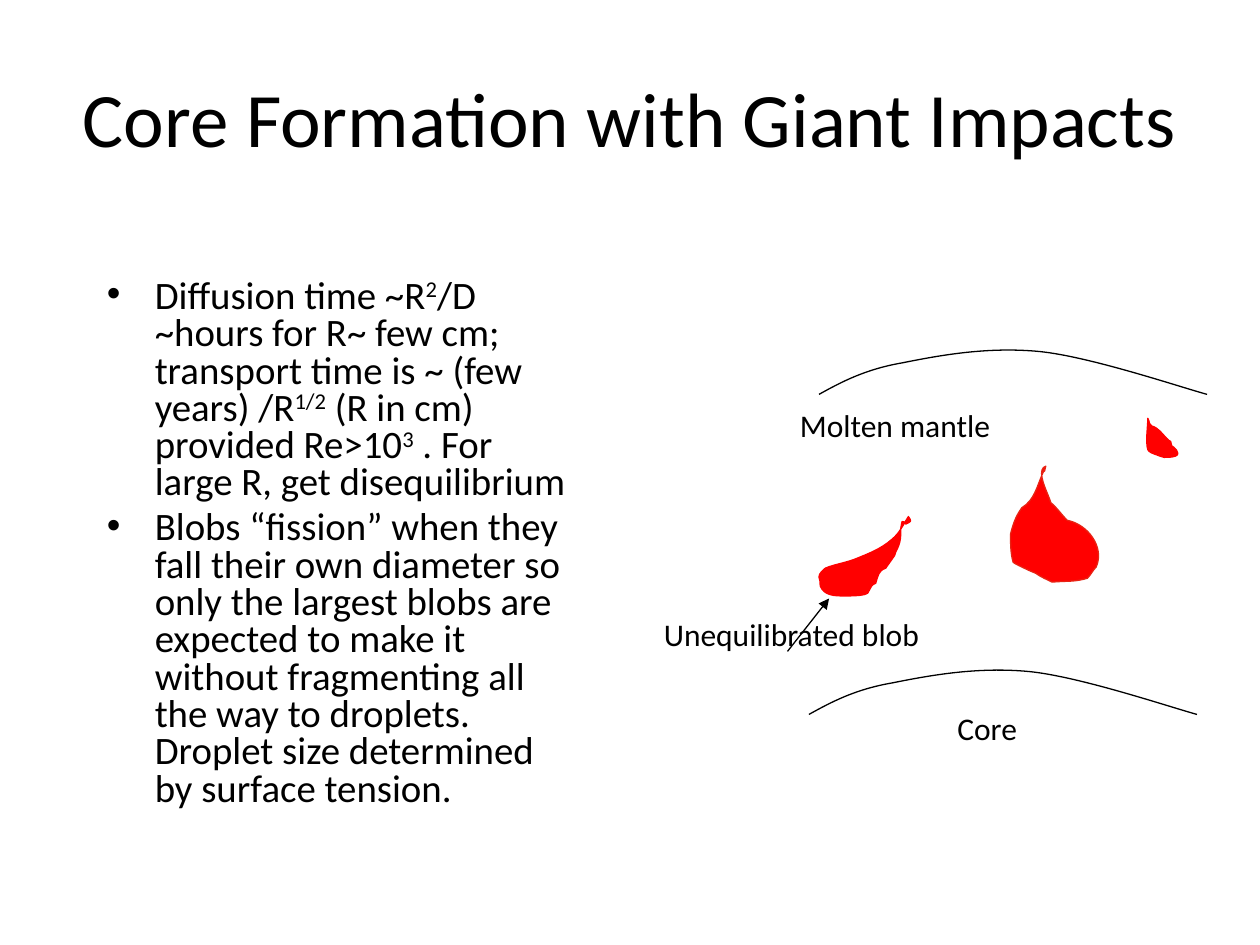
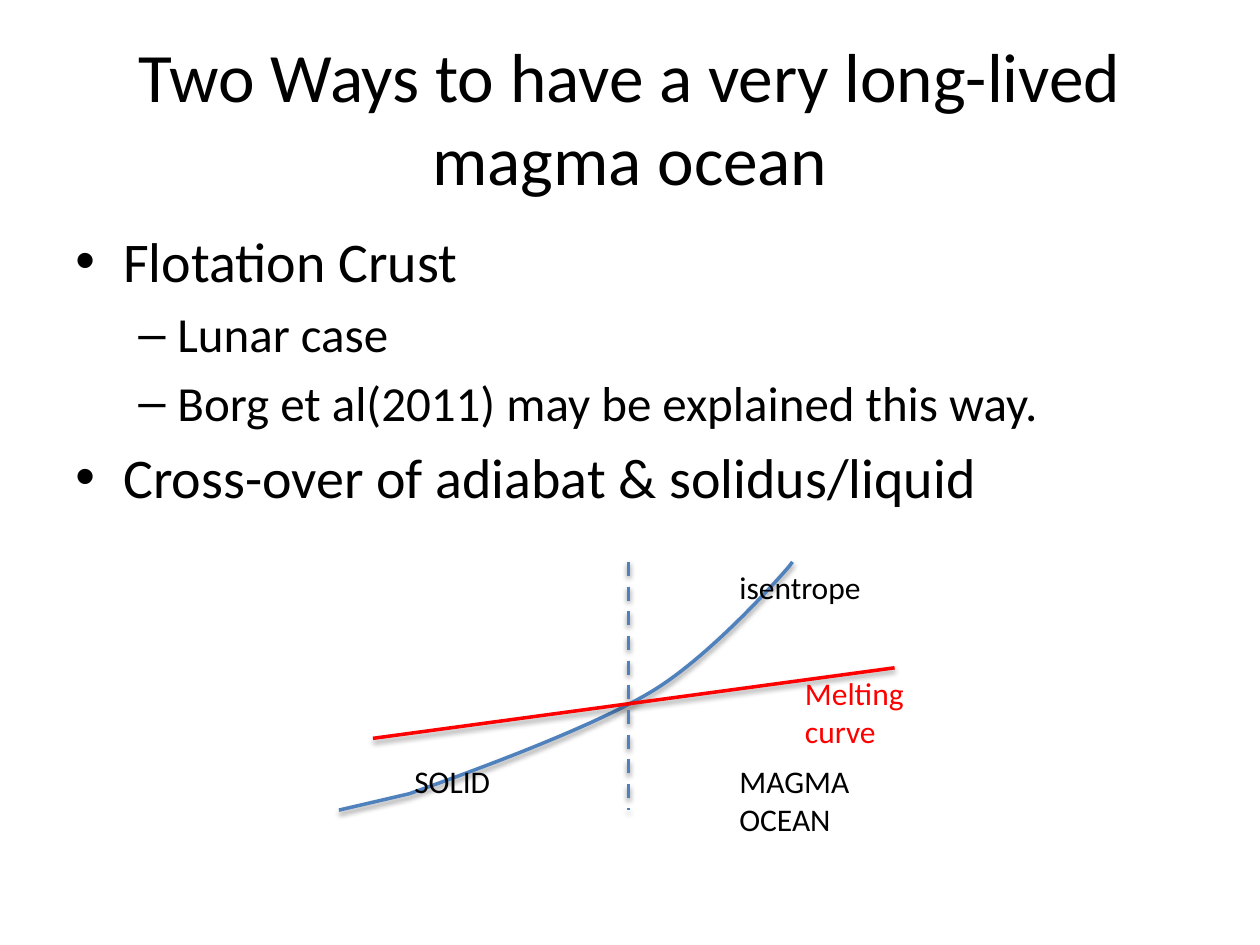
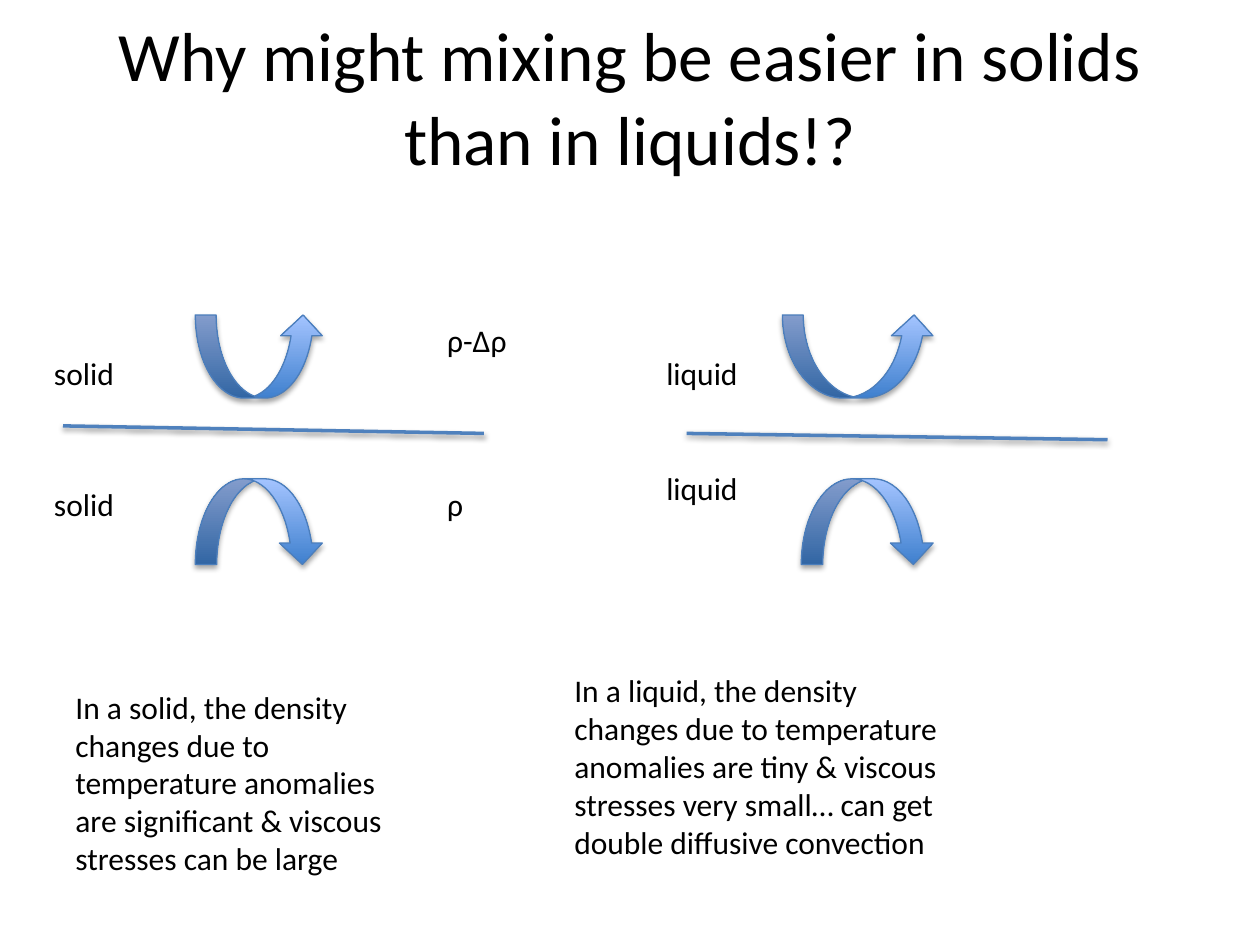
from collections import namedtuple
from dataclasses import dataclass

from lxml.etree import SubElement
from pptx import Presentation
from pptx.dml.color import RGBColor
from pptx.enum.dml import MSO_LINE
from pptx.enum.shapes import MSO_CONNECTOR, MSO_SHAPE
from pptx.enum.text import MSO_ANCHOR as Anchor, PP_ALIGN as Align
from pptx.oxml.ns import qn
from pptx.util import Emu, Pt

EMU_PER_PX = 9144
Box = namedtuple("Box", "left top width height")
Level = namedtuple("Level", "mark margin hang")
LEVELS = (Level("•", 38, 38), Level("–", 81, 31))


@dataclass(frozen=True)
class Theme:
    """Colours, font and type sizes shared by all slides."""
    font: str = "Calibri"
    ink: str = "000000"
    red: str = "FF0000"
    blob_edge: str = "E82314"
    blue: str = "4F81BD"
    arrow_edge: str = "4B7EBC"
    arrow_dark: str = "3F80CE"
    arrow_light: str = "A4C4FF"
    big_title: float = 44
    title: float = 39.6
    body: float = 32
    sub: float = 28
    small_body: float = 22.2
    label: float = 18
    thin: float = 0.75
    thick: float = 2


THEME = Theme()

ARC = [(0, 38), (18, 28, 37, 18, 66, 13), (96, 7, 134, 0, 175, 4),
       (215, 8, 286, 32, 308, 38)]
LARGE_BLOB = [
    (28, 5), (25, 16, 30, 0, 25, 12), (21, 21, 19, 32, 9, 38),
    (4, 45, 2, 51, 0, 59), (0, 66, 0, 74, 2, 81), (2, 82, 11, 86, 13, 87),
    (15, 88, 20, 90, 20, 90), (24, 93, 29, 95, 33, 97),
    (45, 96, 51, 97, 61, 94), (64, 91, 65, 88, 68, 85),
    (75, 69, 61, 51, 45, 48), (40, 43, 37, 38, 32, 34),
    (30, 27, 23, 15, 25, 8), (25, 6, 27, 6, 28, 5)]
LONG_BLOB = [
    (71, 0), (66, 8, 64, 13, 58, 18), (49, 26, 38, 30, 28, 34),
    (20, 37, 12, 38, 5, 41), (3, 43, 0, 45, 0, 48), (1, 50, 1, 53, 1, 55),
    (4, 63, 13, 63, 20, 63), (26, 63, 31, 63, 36, 62),
    (41, 62, 39, 55, 45, 53), (47, 47, 47, 43, 53, 41),
    (55, 38, 58, 34, 60, 31), (61, 27, 63, 25, 64, 21),
    (65, 17, 65, 13, 65, 9), (66, 7, 65, 5, 66, 4),
    (67, 3, 68, 5, 69, 6), (73, 4, 74, 4, 71, 0)]
SMALL_BLOB = [
    (2, 0), (2, 6, 0, 19, 2, 25), (3, 27, 6, 28, 9, 29),
    (11, 30, 15, 31, 15, 31), (18, 31, 21, 31, 24, 30),
    (29, 28, 22, 22, 21, 22), (19, 15, 22, 21, 17, 16),
    (13, 12, 11, 8, 5, 6), (2, 3, 4, 4, 2, 0)]
ISENTROPE = [
    (0, 197), (56, 184), (98, 169, 198, 133, 248, 103),
    (298, 73, 357, 4, 357, 4), (357, 4), (360, 0)]


def px(length):
    """Turn px into EMU."""
    return Emu(round(length * EMU_PER_PX))


def color(code):
    """Turn a hex code into a colour."""
    return RGBColor.from_string(code)


def inside(box, left, top, width=0, height=0):
    """Return a box placed relative to an outer box."""
    return Box(box.left + left, box.top + top, width, height)


def style_font(font, size, ink=THEME.ink):
    """Apply the theme font with a size and colour."""
    font.name, font.size = THEME.font, Pt(size)
    font.color.rgb = color(ink)


def style_line(shape, ink, width):
    """Set the line colour and width."""
    shape.line.color.rgb = color(ink)
    shape.line.width = Pt(width)


def set_shadow(shape, opacity=0, distance=1.6):
    """Replace the shadow with a soft one below, or with none."""
    effects = SubElement(shape._element.spPr, qn("a:effectLst"))
    if opacity:
        outer = SubElement(effects, qn("a:outerShdw"), blurRad=str(Pt(3.1)),
                           dist=str(Pt(distance)), dir="5400000", rotWithShape="0")
        shade = SubElement(outer, qn("a:srgbClr"), val=THEME.ink)
        SubElement(shade, qn("a:alpha"), val=str(opacity * 1000))


def add_text(page, box, text="", size=THEME.label, ink=THEME.ink):
    """Add a wrapping text box and return its frame."""
    frame = page.shapes.add_textbox(*map(px, box)).text_frame
    frame.word_wrap = True
    para = frame.paragraphs[0]
    if text:
        para.text = text
        style_font(para.font, size, ink)
    return frame


def add_title(page, box, text, size=THEME.title, lift=0):
    """Add a centred title, raised by a bottom inset if asked."""
    frame = add_text(page, box, text, size)
    frame.vertical_anchor = Anchor.MIDDLE
    frame.margin_bottom = px(5 + 2 * lift)
    frame.paragraphs[0].alignment = Align.CENTER


def add_bullets(page, box, items, spacing=1.0):
    """Add bullets from (level, size, text); carets enclose superscripts."""
    frame = add_text(page, box)
    for index, (depth, size, text) in enumerate(items):
        para = frame.add_paragraph() if index else frame.paragraphs[0]
        level = LEVELS[depth]
        para.level = depth
        para.line_spacing = spacing
        if index:
            para.space_before = Pt(round(size * 0.2, 1))
        props = para._p.get_or_add_pPr()
        props.set("marL", str(px(level.margin)))
        props.set("indent", str(px(-level.hang)))
        SubElement(props, qn("a:buFont"), typeface="Arial")
        SubElement(props, qn("a:buChar"), char=level.mark)
        style_font(para.font, size)
        for part, words in enumerate(text.split("^")):
            span = para.add_run()
            span.text = words
            if part % 2:
                span.font._element.set("baseline", "30000")


def add_line(page, box, start, end, ink, width, shadow=0):
    """Draw a straight line between two points of a box."""
    begin, finish = inside(box, *start), inside(box, *end)
    line = page.shapes.add_connector(MSO_CONNECTOR.STRAIGHT, px(begin.left), px(begin.top),
                                     px(finish.left), px(finish.top))
    style_line(line, ink, width)
    set_shadow(line, shadow)
    return line


def bend(curve, steps):
    """Turn each run of three segments that stands for a curve into one."""
    segments = iter(list(curve._element.iter(qn("a:lnTo"))))
    for step in steps:
        first = next(segments)
        if len(step) == 6:
            first.tag = qn("a:cubicBezTo")
            for _ in range(2):
                other = next(segments)
                first.append(other[0])
                other.getparent().remove(other)


def add_curve(page, box, outline, ink, width=THEME.thin, fill=None, shadow=0):
    """Draw an outline of straight and cubic steps, closed when filled."""
    points = [(px(box.left + step[at]), px(box.top + step[at + 1]))
              for step in outline for at in range(0, len(step), 2)]
    builder = page.shapes.build_freeform(*points[0])
    builder.add_line_segments(points[1:], close=bool(fill))
    curve = builder.convert_to_shape()
    bend(curve, outline[1:])
    if fill:
        curve.fill.solid()
        curve.fill.fore_color.rgb = color(fill)
    else:
        curve.fill.background()
    style_line(curve, ink, width)
    set_shadow(curve, shadow)


def add_curved_arrow(page, box, kind):
    """Add a curved arrow with a vertical gradient."""
    arrow = page.shapes.add_shape(kind, *map(px, box))
    arrow.fill.gradient()
    arrow.fill.gradient_angle = 90
    for stop, code in zip(arrow.fill.gradient_stops, (THEME.arrow_dark, THEME.arrow_light)):
        stop.color.rgb = color(code)
    style_line(arrow, THEME.arrow_edge, THEME.thin)
    set_shadow(arrow, 35, 1.8)


def draw_mantle(page, box):
    """Draw blobs sinking through the molten mantle to the core."""
    for left, top in ((125, 254), (133, 0)):
        add_curve(page, inside(box, left, top), ARC, THEME.ink)
    for left, top, outline, edge in ((285, 90, LARGE_BLOB, THEME.blob_edge),
                                     (133, 135, LONG_BLOB, THEME.red),
                                     (392, 57, SMALL_BLOB, THEME.red)):
        add_curve(page, inside(box, left, top), outline, edge, fill=THEME.red)
    add_text(page, inside(box, 108, 42, 183, 90), "Molten mantle")
    add_text(page, inside(box, 233, 283, 133, 50), "Core")
    pointer = add_line(page, box, (108, 242), (141, 200), THEME.ink, THEME.thin)
    SubElement(pointer.line._get_or_add_ln(), qn("a:tailEnd"), type="triangle")
    add_text(page, inside(box, 0, 208, 308, 50), "Unequilibrated blob")


def draw_crossover(page, box):
    """Draw the isentrope crossing the melting curve."""
    add_curve(page, box, ISENTROPE, THEME.blue, THEME.thick, shadow=38)
    add_line(page, box, (27, 140), (441, 84), THEME.red, THEME.thick, 38)
    divider = add_line(page, box, (230, 0), (230, 197), THEME.blue, THEME.thick, 38)
    divider.line.dash_style = MSO_LINE.DASH
    for left, top, width, height, text, ink in (
            (308, 0, 133, 40, "isentrope", THEME.ink),
            (360, 84, 128, 71, "Melting curve", THEME.red),
            (50, 154, 127, 40, "SOLID", THEME.ink),
            (308, 154, 133, 71, "MAGMA OCEAN", THEME.ink)):
        add_text(page, inside(box, left, top, width, height), text, ink=ink)


def draw_mixing(page, box, boundary, up, down, labels):
    """Draw two layers that stir on either side of a boundary."""
    add_line(page, box, *boundary, THEME.blue, THEME.thick, 38)
    for kind, (left, width), top, height in ((MSO_SHAPE.CURVED_UP_ARROW, up, 0, 66),
                                             (MSO_SHAPE.CURVED_DOWN_ARROW, down, 130, 68)):
        add_curved_arrow(page, inside(box, left, top, width, height), kind)
    for left, top, width, text in labels:
        add_text(page, inside(box, left, top, width, 40), text)


def build_impacts(page):
    """Build the slide on core formation."""
    add_title(page, Box(50, 30, 900, 125), "Core Formation with Giant Impacts", THEME.big_title)
    add_bullets(page, Box(75, 217, 392, 450), [
        (0, THEME.small_body, "Diffusion time ~R^2^/D ~hours for R~ few cm; transport time is "
         "~ (few years) /R^1/2^ (R in cm) provided Re>10^3^ . For large R, get disequilibrium"),
        (0, THEME.small_body, "Blobs “fission” when they fall their own diameter so only the "
         "largest blobs are expected to make it without fragmenting all the way to droplets. "
         "Droplet size determined by surface tension."),
    ], spacing=0.8)
    draw_mantle(page, Box(517, 275, 441, 333))


def build_magma_ocean(page):
    """Build the slide on long-lived magma oceans."""
    add_title(page, Box(50, 30, 900, 125), "Two Ways to have a very long-lived magma ocean")
    add_bullets(page, Box(50, 175, 900, 495), [
        (0, THEME.body, "Flotation Crust"),
        (1, THEME.sub, "Lunar case"),
        (1, THEME.sub, "Borg et al(2011) may be explained this way."),
        (0, THEME.body, "Cross-over of adiabat & solidus/liquid"),
    ])
    draw_crossover(page, Box(269, 446, 488, 225))


def build_mixing(page):
    """Build the slide that compares mixing in solids and liquids."""
    add_title(page, Box(50, 30, 900, 158),
              "Why might mixing be easier in solids than in liquids!?", lift=33)
    draw_mixing(page, Box(33, 250, 444, 198), ((17, 88), (351, 94)), (122, 102), (122, 102),
                [(0, 26, 122, "solid"), (0, 130, 122, "solid"),
                 (312, 0, 132, "ρ-Δρ"), (312, 130, 66, "ρ")])
    draw_mixing(page, Box(519, 250, 360, 198), ((26, 94), (360, 99)), (102, 121), (117, 106),
                [(0, 26, 130, "liquid"), (0, 117, 80, "liquid")])
    add_text(page, Box(50, 541, 295, 162),
             "In a solid, the density changes due to temperature anomalies are significant "
             "& viscous stresses can be large")
    add_text(page, Box(446, 528, 309, 192),
             "In a liquid, the density changes due to temperature anomalies are tiny "
             "& viscous stresses very small… can get double diffusive convection")


def main():
    """Build and save the deck."""
    deck = Presentation()
    deck.slide_width, deck.slide_height = px(1000), px(750)
    for build in (build_impacts, build_magma_ocean, build_mixing):
        build(deck.slides.add_slide(deck.slide_layouts[6]))
    deck.save("out.pptx")


if __name__ == "__main__":
    main()
